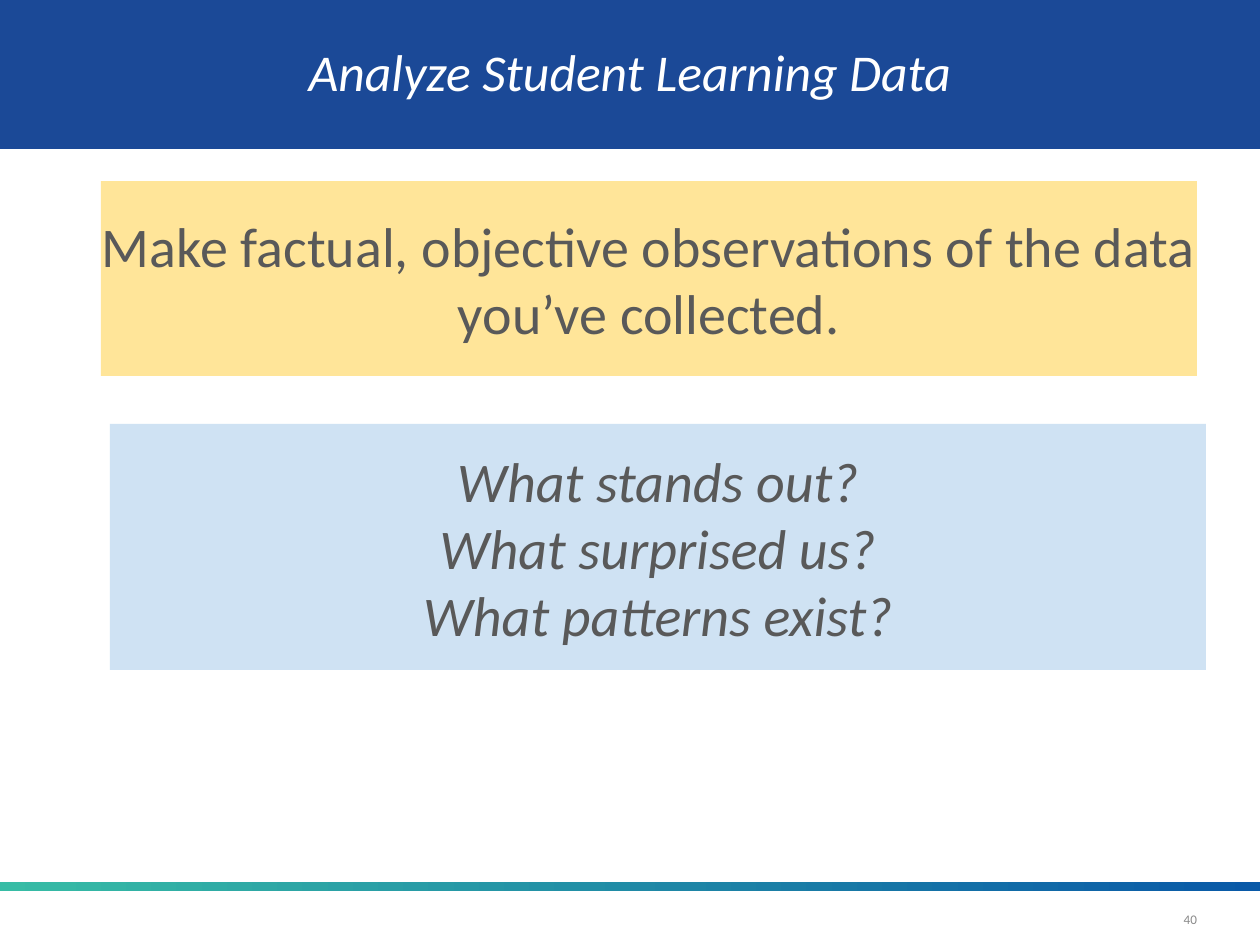
from dataclasses import dataclass

from pptx import Presentation
from pptx import util as u
from pptx.dml.color import RGBColor
from pptx.enum import shapes, text

PX_PER_INCH = 126
PAGE_W, PAGE_H = 1260, 945


@dataclass(frozen=True)
class Theme:
    font: str = "Calibri"
    banner: str = "1B4997"
    yellow: str = "FFE599"
    blue: str = "CFE2F3"
    white: str = "FFFFFF"
    ink: str = "595959"
    muted: str = "898989"
    rule: tuple = ("37BCA5", "0959A7")
    title_size: float = 29.5
    body_size: float = 32
    number_size: float = 7.5


THEME = Theme()
CENTER, RIGHT = text.PP_ALIGN.CENTER, text.PP_ALIGN.RIGHT

# lines, (left, top, width, height), fill, text colour, size, italic, alignment
BLOCKS = [
    (["Analyze Student Learning Data"], (0, -8, PAGE_W, 157),
     THEME.banner, THEME.white, THEME.title_size, True, CENTER),
    (["Make factual, objective observations of the data you’ve collected."],
     (101, 181, 1096, 195), THEME.yellow, THEME.ink, THEME.body_size, False, CENTER),
    (["What stands out?", "What surprised us?", "What patterns exist?"],
     (110, 424, 1096, 246), THEME.blue, THEME.ink, THEME.body_size, True, CENTER),
    (["40"], (1177, 911, 20, 16),
     None, THEME.muted, THEME.number_size, False, RIGHT),
]
RULE_PLACE = (0, 882, PAGE_W, 9)


def px(n):
    return u.Emu(round(n * 914400 / PX_PER_INCH))


def rgb(code):
    return RGBColor.from_string(code)


def add_bar(page, place):
    """Add a rectangle without line or shadow."""
    bar = page.shapes.add_shape(shapes.MSO_SHAPE.RECTANGLE, *map(px, place))
    bar.shadow.inherit = False
    bar.line.fill.background()
    return bar


def add_rule(page):
    fill = add_bar(page, RULE_PLACE).fill
    fill.gradient()
    fill.gradient_angle = 0
    for stop, color, position in zip(fill.gradient_stops, THEME.rule, (0, 1)):
        stop.color.rgb = rgb(color)
        stop.position = position


def add_block(page, lines, place, fill, color, size, italic, align):
    if fill:
        box = add_bar(page, place)
        box.fill.solid()
        box.fill.fore_color.rgb = rgb(fill)
    else:
        box = page.shapes.add_textbox(*map(px, place))
    frame = box.text_frame
    frame.word_wrap = bool(fill)
    frame.vertical_anchor = text.MSO_ANCHOR.MIDDLE
    frame.margin_left = frame.margin_right = 0
    frame.margin_top = frame.margin_bottom = 0
    frame.text = "\n".join(lines)
    for para in frame.paragraphs:
        para.alignment = align
        para.font.name = THEME.font
        para.font.size = u.Pt(size)
        para.font.italic = italic
        para.font.color.rgb = rgb(color)


def main():
    deck = Presentation()
    deck.slide_width, deck.slide_height = px(PAGE_W), px(PAGE_H)
    page = deck.slides.add_slide(deck.slide_layouts[6])
    add_rule(page)
    for block in BLOCKS:
        add_block(page, *block)
    deck.save("out.pptx")


if __name__ == "__main__":
    main()
